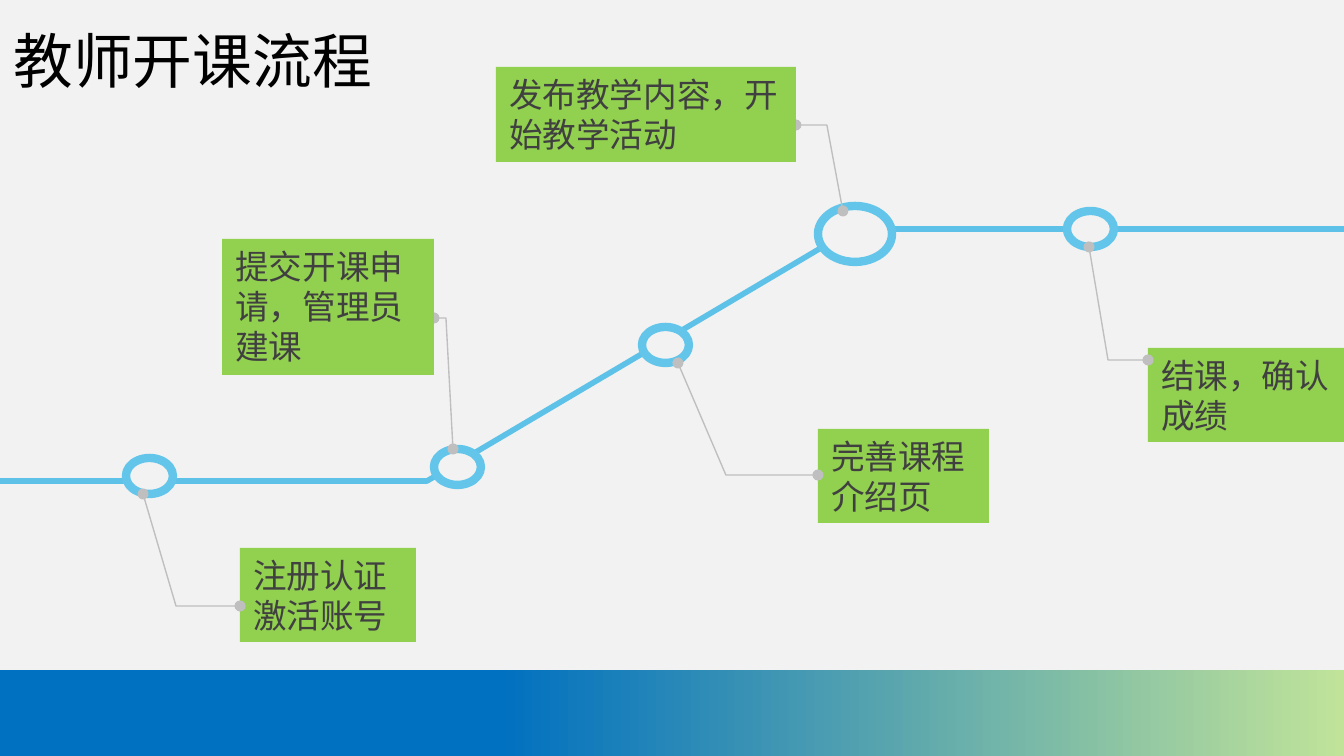
from lxml import etree
from pptx import Presentation
from pptx.dml.color import RGBColor
from pptx.enum.shapes import MSO_SHAPE as Shape
from pptx.enum.text import MSO_ANCHOR as Anchor, MSO_AUTO_SIZE as AutoSize, PP_ALIGN as Align
from pptx.oxml.ns import qn
from pptx.util import Pt

PX = 914400 / 134.4
WIDTH, HEIGHT = 1344, 756
FONT = "Noto Sans CJK SC"
BACKGROUND, GREEN, GRAY, TEXT = "F2F2F2", "92D050", "BFBFBF", "404040"
ROUTE_BLUE, RING_BLUE = "5EC2E8", "63C5EA"

TITLE = "教师开课流程"
ROUTE = [(0, 481), (427, 481), (853, 229), (1345, 229)]
SMALL, LARGE = (47, 36), (74, 56)

# Each step: paragraphs, box, ring position and size, leader from ring to box
STEPS = [
    (["注册认证激活账号"], (240, 548, 176, 94), (126, 458), SMALL,
     [(143, 494), (176, 606), (240, 606)]),
    (["提交开课申请，管理员建课"], (222, 239, 212, 136), (434, 449), SMALL,
     [(453, 449), (446, 318), (434, 318)]),
    (["完善课程介绍页"], (818, 429, 171, 94), (642, 327), SMALL,
     [(678, 363), (726, 475), (818, 475)]),
    (["发布教学内容，开", "始教学活动"], (496, 67, 300, 95), (818, 206), LARGE,
     [(843, 211), (827, 125), (796, 125)]),
    (["结课，确认成绩"], (1148, 348, 196, 94), (1067, 211), SMALL,
     [(1089, 247), (1108, 360), (1148, 360)]),
]


def px(value):
    return round(value * PX)


def color(hex_string):
    return RGBColor.from_string(hex_string)


def set_line(shape, hex_string, points):
    shape.line.color.rgb = color(hex_string)
    shape.line.width = Pt(points)


def add_block(kind, left, top, width, height, fill=None):
    shape = slide.shapes.add_shape(kind, px(left), px(top), px(width), px(height))
    shape.shadow.inherit = False
    shape.line.fill.background()
    if fill:
        shape.fill.solid()
        shape.fill.fore_color.rgb = color(fill)
    return shape


def add_polyline(points, hex_string, weight):
    builder = slide.shapes.build_freeform(*points[0], scale=PX)
    builder.add_line_segments(points[1:], close=False)
    shape = builder.convert_to_shape()
    shape.shadow.inherit = False
    shape.fill.background()
    set_line(shape, hex_string, weight)
    return shape


def add_leader(points):
    outline = add_polyline(points, GRAY, 0.75).line._get_or_add_ln()
    for end in ("a:headEnd", "a:tailEnd"):
        etree.SubElement(outline, qn(end), type="oval")


def add_text(paragraph, text, size, hex_string):
    paragraph.alignment = Align.LEFT
    run = paragraph.add_run()
    run.text = text
    run.font.size = Pt(size)
    run.font.name = FONT
    run.font.color.rgb = color(hex_string)
    etree.SubElement(run.font._element, qn("a:ea"), typeface=FONT)


def add_box(paragraphs, box):
    frame = add_block(Shape.RECTANGLE, *box, fill=GREEN).text_frame
    frame.word_wrap = True
    frame.auto_size = AutoSize.SHAPE_TO_FIT_TEXT
    frame.vertical_anchor = Anchor.TOP
    for index, text in enumerate(paragraphs):
        paragraph = frame.add_paragraph() if index else frame.paragraphs[0]
        add_text(paragraph, text, 18, TEXT)


presentation = Presentation()
presentation.slide_width, presentation.slide_height = px(WIDTH), px(HEIGHT)
slide = presentation.slides.add_slide(presentation.slide_layouts[5])

# Background and footer band
slide.background.fill.solid()
slide.background.fill.fore_color.rgb = color(BACKGROUND)
band = add_block(Shape.RECTANGLE, 0, 670, WIDTH, HEIGHT - 670)
band.fill.gradient()
band.fill.gradient_angle = 0
for stop, (position, hex_string) in zip(band.fill.gradient_stops,
                                        [(0.37, "0070C0"), (1, "C0E399")]):
    stop.position = position
    stop.color.rgb = color(hex_string)

# Title
title = slide.shapes.title
title.left, title.top, title.width, title.height = map(px, (0, 17, 388, 86))
title.text_frame.word_wrap = False
title.text_frame.auto_size = AutoSize.SHAPE_TO_FIT_TEXT
title.text_frame.vertical_anchor = Anchor.MIDDLE
add_text(title.text_frame.paragraphs[0], TITLE, 32, "000000")

# Route with its rings
add_polyline(ROUTE, ROUTE_BLUE, 3)
for _, _, position, size, _ in STEPS:
    set_line(add_block(Shape.OVAL, *position, *size, fill=BACKGROUND), RING_BLUE, 4.5)

# Step boxes: a leader that rises runs behind its box, one that falls in front
for paragraphs, box, _, _, leader in STEPS:
    rises = leader[-1][1] < leader[0][1]
    if rises:
        add_leader(leader)
    add_box(paragraphs, box)
    if not rises:
        add_leader(leader)

presentation.save("out.pptx")
